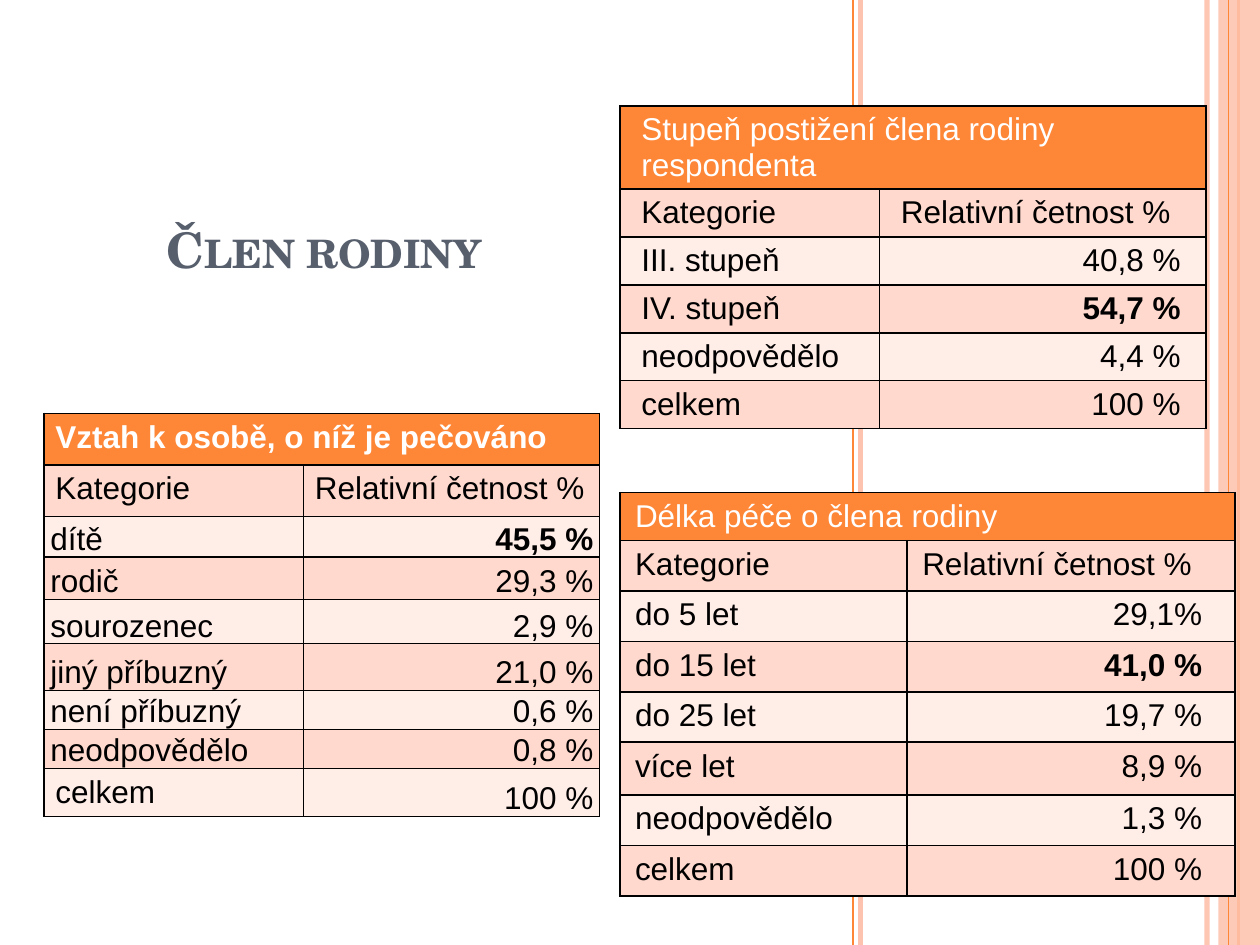
from dataclasses import dataclass
from typing import NamedTuple

import pptx
import pptx.dml.color
import pptx.enum.shapes
import pptx.enum.text
import pptx.oxml
import pptx.oxml.ns
import pptx.oxml.xmlchemy
import pptx.util
from pptx.util import Inches

COLORS = {
    "orange": "FE8637",
    "peach": "FEC3AE",
    "band_dark": "FFD9CE",
    "band_light": "FFEDE8",
    "title": "575F6D",
    "black": "000000",
    "white": "FFFFFF",
}
TABLE_FONT = "Arial"
TITLE_FONT = "TeX Gyre Schola"
SLIDE_HEIGHT = 7.5
TOP = pptx.enum.text.MSO_ANCHOR.TOP
BOTTOM = pptx.enum.text.MSO_ANCHOR.BOTTOM
LEFT = pptx.enum.text.PP_ALIGN.LEFT
RIGHT = pptx.enum.text.PP_ALIGN.RIGHT


class Stripe(NamedTuple):
    x: float
    color: str
    width: float
    opacity: int = 100


class Padding(NamedTuple):
    left: float
    right: float
    vertical: float = 0.05
    anchor: pptx.enum.text.MSO_ANCHOR = TOP


@dataclass
class FrequencyTable:
    title: str
    left: float
    top: float
    columns: list[float]
    row_heights: list[float]
    shares: list[tuple[str, str]]
    highest: str
    heading: Padding
    label: Padding
    value: Padding
    bold_title: bool = False


STRIPES = [
    Stripe(9.58, "peach", 3, 93),
    Stripe(6.83, "peach", 3),
    Stripe(6.77, "orange", 1),
    Stripe(9.83, "orange", 1.5),
]
BAND_STRIPE = Stripe(9.75, "orange", 0.75)

TABLES = [
    FrequencyTable(
        "Délka péče o člena rodiny", 4.92, 3.91, [2.28, 2.6],
        [0.38, 0.4, 0.4, 0.4, 0.4, 0.42, 0.4, 0.4],
        [("do 5 let", "29,1%"), ("do 15 let", "41,0 %"), ("do 25 let", "19,7 %"),
         ("více let", "8,9 %"), ("neodpovědělo", "1,3 %"), ("celkem", "100 %")],
        "do 15 let", Padding(0.12, 0.12), Padding(0.12, 0.12), Padding(0.12, 0.26),
    ),
    FrequencyTable(
        "Stupeň postižení člena rodiny respondenta", 4.92, 0.84, [2.06, 2.59],
        [0.66] + [0.38] * 5,
        [("III. stupeň", "40,8 %"), ("IV. stupeň", "54,7 %"),
         ("neodpovědělo", "4,4 %"), ("celkem", "100 %")],
        "IV. stupeň", Padding(0.17, 0.17), Padding(0.17, 0.17), Padding(0.17, 0.2),
    ),
    FrequencyTable(
        "Vztah k osobě, o níž je pečováno", 0.35, 3.28, [2.06, 2.35],
        [0.41, 0.41, 0.32, 0.34, 0.35, 0.37, 0.31, 0.31, 0.38],
        [("dítě", "45,5 %"), ("rodič", "29,3 %"), ("sourozenec", "2,9 %"),
         ("jiný příbuzný", "21,0 %"), ("není příbuzný", "0,6 %"),
         ("neodpovědělo", "0,8 %"), ("celkem", "100 %")],
        "dítě", Padding(0.09, 0.09), Padding(0.05, 0.05, 0, BOTTOM),
        Padding(0.05, 0.05, 0, BOTTOM), bold_title=True,
    ),
]


def rgb(name: str) -> pptx.dml.color.RGBColor:
    return pptx.dml.color.RGBColor.from_string(COLORS[name])


def set_opacity(element, percent: int) -> None:
    color = next(element.iter(pptx.oxml.ns.qn("a:srgbClr")))
    alpha = pptx.oxml.xmlchemy.OxmlElement("a:alpha")
    alpha.set("val", str(percent * 1000))
    color.append(alpha)


def draw_stripe(slide, stripe: Stripe) -> None:
    x = Inches(stripe.x)
    line = slide.shapes.add_connector(
        pptx.enum.shapes.MSO_CONNECTOR.STRAIGHT, x, 0, x, Inches(SLIDE_HEIGHT))
    line.line.color.rgb = rgb(stripe.color)
    line.line.width = pptx.util.Pt(stripe.width)
    properties = line._element.spPr
    if stripe.opacity < 100:
        set_opacity(properties, stripe.opacity)
    properties.append(pptx.oxml.xmlchemy.OxmlElement("a:effectLst"))


def draw_side_band(slide) -> None:
    band = slide.shapes.add_shape(
        pptx.enum.shapes.MSO_SHAPE.RECTANGLE,
        Inches(9.67), 0, Inches(0.33), Inches(SLIDE_HEIGHT))
    band.shadow.inherit = False
    band.fill.solid()
    band.fill.fore_color.rgb = rgb("peach")
    band.line.fill.background()
    set_opacity(band._element.spPr, 87)


def add_borders(cell) -> None:
    properties = cell._tc.get_or_add_tcPr()
    for side in ("lnL", "lnR", "lnT", "lnB"):
        properties.append(pptx.oxml.parse_xml(
            f'<a:{side} {pptx.oxml.ns.nsdecls("a")} w="12700"><a:solidFill>'
            f'<a:srgbClr val="{COLORS["black"]}"/></a:solidFill></a:{side}>'))


def fill_cell(cell, text: str, fill: str, padding: Padding, color: str = "black",
              bold: bool = False, align: pptx.enum.text.PP_ALIGN = LEFT) -> None:
    add_borders(cell)
    cell.fill.solid()
    cell.fill.fore_color.rgb = rgb(fill)
    cell.margin_left, cell.margin_right = Inches(padding.left), Inches(padding.right)
    cell.margin_top = cell.margin_bottom = Inches(padding.vertical)
    cell.vertical_anchor = padding.anchor
    paragraph = cell.text_frame.paragraphs[0]
    paragraph.text = text
    paragraph.alignment = align
    paragraph.font.name = TABLE_FONT
    paragraph.font.size = pptx.util.Pt(18)
    paragraph.font.bold = bold
    paragraph.font.color.rgb = rgb(color)


def draw_table(slide, data: FrequencyTable) -> None:
    table = slide.shapes.add_table(
        len(data.row_heights), 2, Inches(data.left), Inches(data.top),
        Inches(sum(data.columns)), Inches(sum(data.row_heights))).table
    table.first_row = table.horz_banding = False
    for column, width in zip(table.columns, data.columns):
        column.width = Inches(width)
    for row, height in zip(table.rows, data.row_heights):
        row.height = Inches(height)

    # Title row and column headings
    table.cell(0, 0).merge(table.cell(0, 1))
    fill_cell(table.cell(0, 0), data.title, "orange", data.heading, "white", data.bold_title)
    fill_cell(table.cell(0, 1), "", "orange", data.heading)
    for column, heading in enumerate(("Kategorie", "Relativní četnost %")):
        fill_cell(table.cell(1, column), heading, "band_dark", data.heading)

    # Categories with their shares
    for row, (category, share) in enumerate(data.shares, start=2):
        band = "band_dark" if row % 2 else "band_light"
        padding = data.heading if category == "celkem" else data.label
        fill_cell(table.cell(row, 0), category, band, padding)
        fill_cell(table.cell(row, 1), share, band, data.value,
                  bold=category == data.highest, align=RIGHT)


def draw_title(slide) -> None:
    frame = slide.shapes.add_textbox(
        Inches(1.22), Inches(0.21), Inches(3.54), Inches(2.05)).text_frame
    frame.word_wrap = True
    frame.vertical_anchor = BOTTOM
    heading = frame.paragraphs[0]
    heading.text = "Člen rodiny"
    heading.font.name = TITLE_FONT
    heading.font.size = pptx.util.Pt(28)
    heading.font.bold = True
    heading.font.color.rgb = rgb("title")
    heading._p.pPr.find(pptx.oxml.ns.qn("a:defRPr")).set("cap", "small")


def main() -> None:
    presentation = pptx.Presentation()
    presentation.slide_width = Inches(10)
    presentation.slide_height = Inches(SLIDE_HEIGHT)
    slide = presentation.slides.add_slide(presentation.slide_layouts[6])

    # Background stripes
    for stripe in STRIPES:
        draw_stripe(slide, stripe)
    draw_side_band(slide)
    draw_stripe(slide, BAND_STRIPE)

    # Content
    for data in TABLES:
        draw_table(slide, data)
    draw_title(slide)
    presentation.save("out.pptx")


if __name__ == "__main__":
    main()
